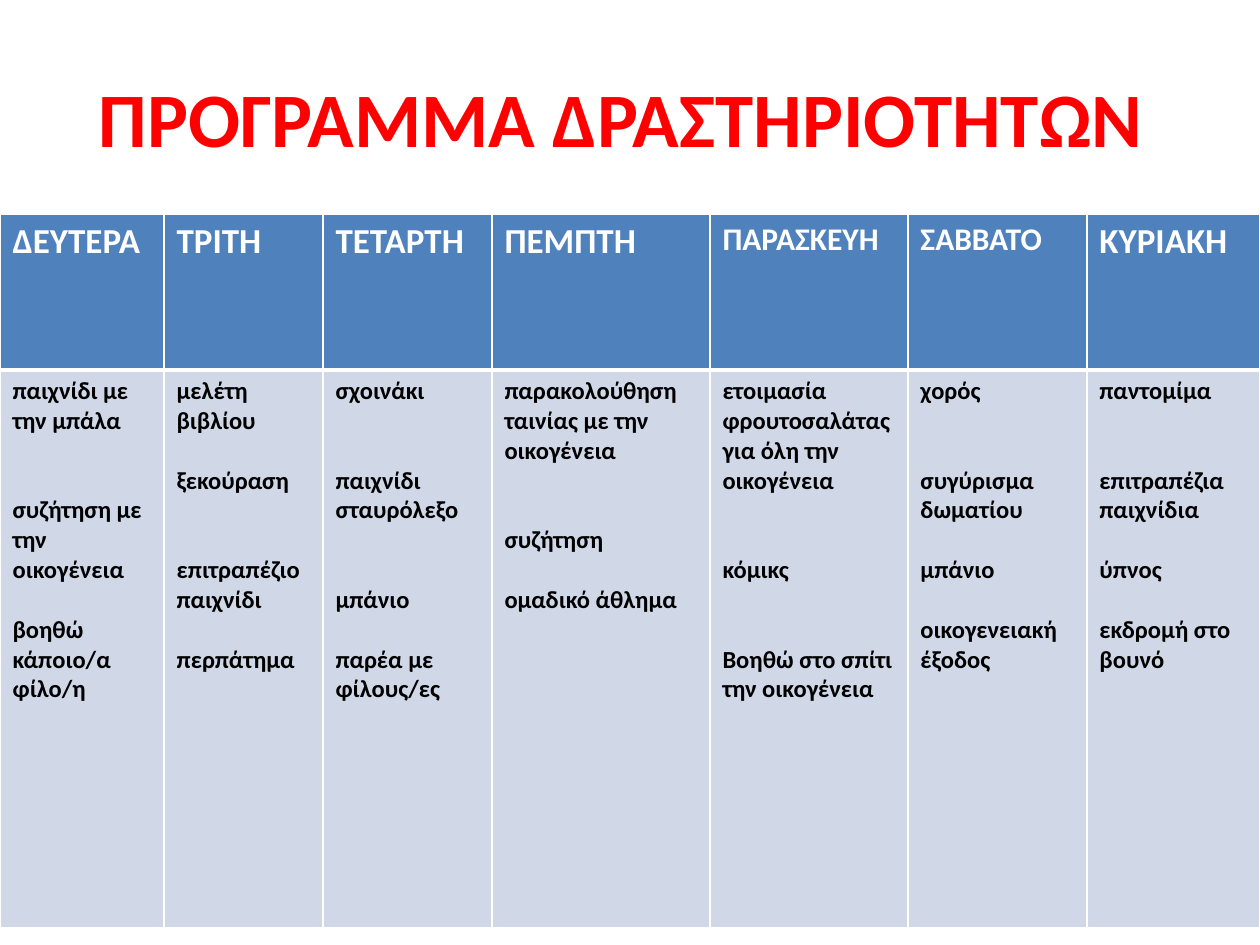
from lxml import etree
from pptx import Presentation
from pptx.dml.color import RGBColor
from pptx.enum.text import MSO_ANCHOR, PP_ALIGN
from pptx.oxml.ns import qn
from pptx.util import Pt

MIDDLE = MSO_ANCHOR.MIDDLE
LEFT, CENTER = PP_ALIGN.LEFT, PP_ALIGN.CENTER
RED = RGBColor(0xFF, 0x00, 0x00)
WHITE = RGBColor(0xFF, 0xFF, 0xFF)
BLACK = RGBColor(0x00, 0x00, 0x00)
BLUE = RGBColor(0x4F, 0x81, 0xBD)
PALE = RGBColor(0xD0, 0xD8, 0xE8)
FONT = "Calibri"
SCALE = 914400 / 126
LINE = 17.07

DAYS = [
    ("ΔΕΥΤΕΡΑ", 20, 164, [
        (0, "παιχνίδι με την μπάλα"), (2, "συζήτηση με την οικογένεια"),
        (1, "βοηθώ κάποιο/α φίλο/η")]),
    ("ΤΡΙΤΗ", 20, 159, [
        (0, "μελέτη βιβλίου"), (1, "ξεκούραση"),
        (2, "επιτραπέζιο παιχνίδι"), (1, "περπάτημα")]),
    ("ΤΕΤΑΡΤΗ", 20, 169, [
        (0, "σχοινάκι"), (2, "παιχνίδι σταυρόλεξο"),
        (2, "μπάνιο"), (1, "παρέα με φίλους/ες")]),
    ("ΠΕΜΠΤΗ", 20, 218, [
        (0, "παρακολούθηση ταινίας με την οικογένεια"), (2, "συζήτηση"),
        (1, "ομαδικό άθλημα")]),
    ("ΠΑΡΑΣΚΕΥΗ", 18, 198, [
        (0, "ετοιμασία φρουτοσαλάτας για όλη την οικογένεια"), (2, "κόμικς"),
        (2, "Βοηθώ στο σπίτι την οικογένεια")]),
    ("ΣΑΒΒΑΤΟ", 18, 179, [
        (0, "χορός"), (2, "συγύρισμα δωματίου"),
        (1, "μπάνιο"), (1, "οικογενειακή έξοδος")]),
    ("ΚΥΡΙΑΚΗ", 20, 173, [
        (0, "παντομίμα"), (2, "επιτραπέζια παιχνίδια"),
        (1, "ύπνος"), (1, "εκδρομή στο βουνό")]),
]


def px(n):
    return round(n * SCALE)


def write(para, text, size=14, color=BLACK, align=LEFT, gap=0):
    para.alignment = align
    if gap:
        para.space_before = Pt(gap * LINE)
    run = para.add_run()
    run.text = text
    font = run.font
    font.name, font.size, font.bold = FONT, Pt(size), True
    font.color.rgb = color


def paint(cell, fill, top=1, base=1):
    props = cell._tc.get_or_add_tcPr()
    for side, width in (("L", 1), ("R", 1), ("T", top), ("B", base)):
        line = etree.SubElement(props, qn(f"a:ln{side}"), w=str(Pt(width)))
        solid = etree.SubElement(line, qn("a:solidFill"))
        etree.SubElement(solid, qn("a:srgbClr"), val=str(WHITE))
    cell.fill.solid()
    cell.fill.fore_color.rgb = fill


def add_title(slide, x, y, w, h):
    title = slide.shapes.title
    title.left, title.top, title.width, title.height = map(px, (x, y, w, h))
    frame = title.text_frame
    frame.vertical_anchor = MIDDLE
    write(frame.paragraphs[0], "ΠΡΟΓΡΑΜΜΑ ΔΡΑΣΤΗΡΙΟΤΗΤΩΝ ",
          size=44, color=RED, align=CENTER)


def add_week(slide, x, y, w, h, head=156):
    table = slide.shapes.add_table(2, len(DAYS), *map(px, (x, y, w, h))).table
    table.rows[0].height = px(head)
    table.rows[1].height = px(h - head)
    total = sum(day[2] for day in DAYS)
    for col, (name, size, width, tasks) in enumerate(DAYS):
        table.columns[col].width = px(w * width / total)
        top, body = table.cell(0, col), table.cell(1, col)
        paint(top, BLUE, base=3)
        paint(body, PALE, top=3)
        write(top.text_frame.paragraphs[0], name, size=size, color=WHITE)
        frame = body.text_frame
        for row, (gap, task) in enumerate(tasks):
            para = frame.add_paragraph() if row else frame.paragraphs[0]
            write(para, task, gap=gap)


def main():
    deck = Presentation()
    deck.slide_width, deck.slide_height = px(1260), px(945)
    slide = deck.slides.add_slide(deck.slide_layouts[5])
    add_title(slide, 63, 38, 1134, 157)
    add_week(slide, 0, 214, 1260, 714)
    deck.save("out.pptx")


if __name__ == "__main__":
    main()
